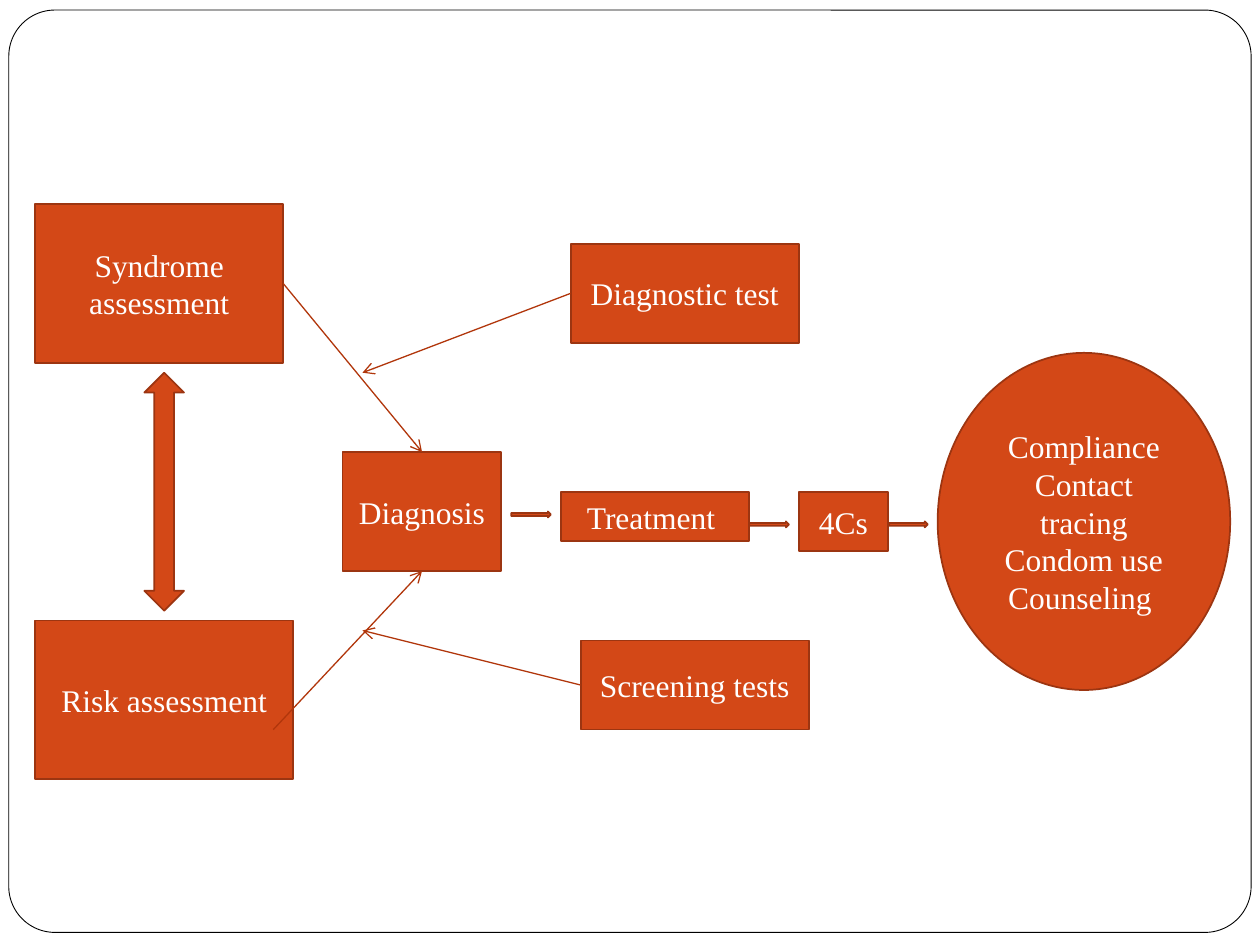
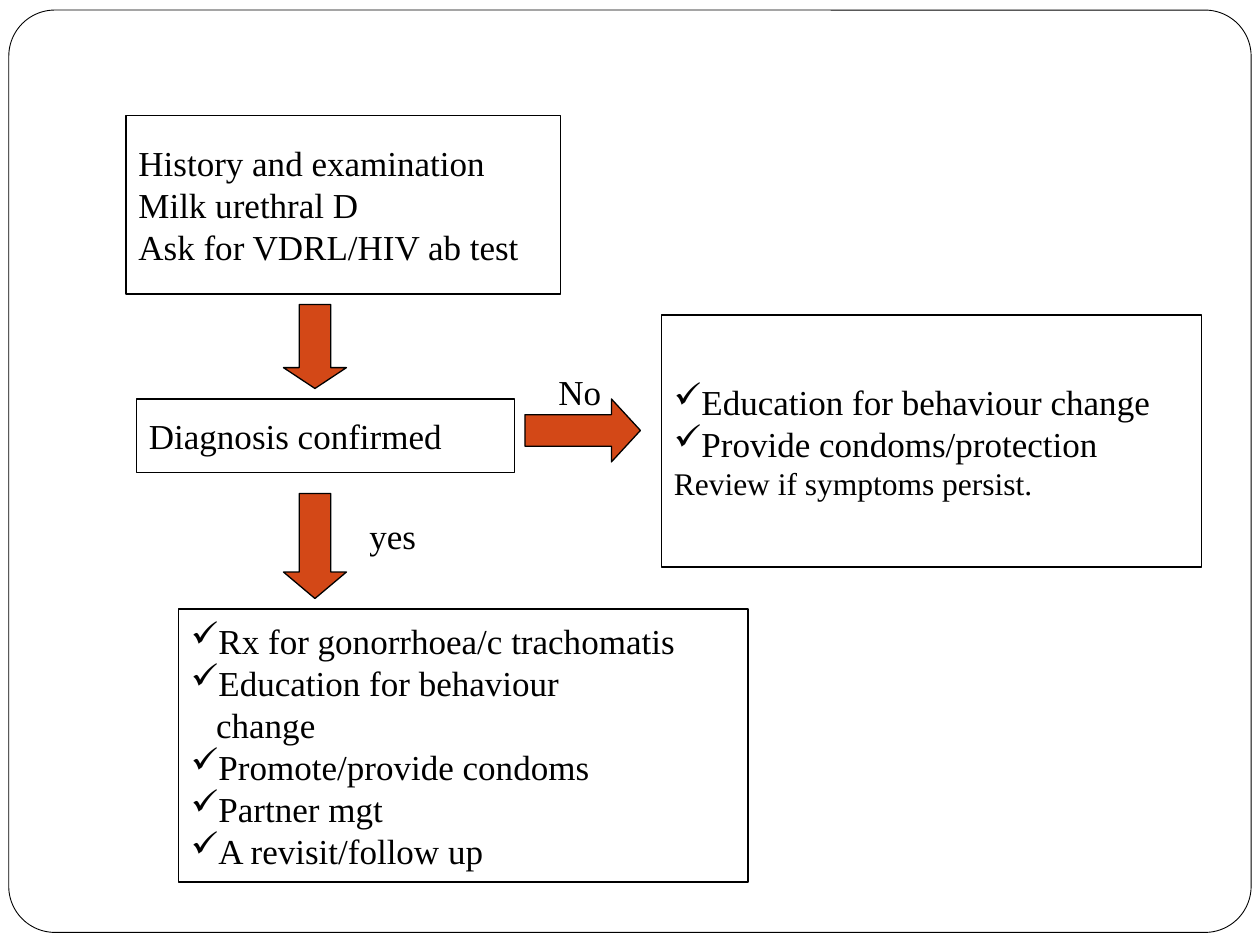
from dataclasses import dataclass

from lxml.etree import SubElement
from pptx import Presentation
from pptx.dml.color import RGBColor
from pptx.enum.shapes import MSO_CONNECTOR as Connector, MSO_SHAPE as Shape
from pptx.enum.text import MSO_ANCHOR as Anchor, PP_ALIGN as Align
from pptx.oxml.ns import qn
from pptx.util import Inches, Pt

WIDTH, HEIGHT = 10, 7.5
FONT = "Times New Roman"
COLORS = {"paper": "FFFFFF", "ink": "000000", "accent": "D34817",
          "accent_edge": "9C3511", "link": "B1360B"}
TOP, LEFT, BOTTOM, RIGHT = range(4)


@dataclass(frozen=True)
class Grid:
    """Square cells, counted from an origin in inches."""
    cell: float
    left: float = 0
    top: float = 0

    def point(self, column: float, row: float) -> tuple:
        return Inches(self.left + column * self.cell), Inches(self.top + row * self.cell)

    def area(self, column: float, row: float, columns: float, rows: float) -> tuple:
        return (*self.point(column, row), Inches(columns * self.cell), Inches(rows * self.cell))


@dataclass(frozen=True)
class Style:
    fill: str
    edge: str
    weight: float
    ink: str
    size: float
    align: Align


@dataclass(frozen=True)
class Line:
    """One paragraph, with its departures from the box's style."""
    text: str
    check: bool = False
    size: float | None = None
    indent: float = 0


@dataclass(frozen=True)
class Node:
    cells: tuple
    lines: tuple = ()
    kind: Shape = Shape.RECTANGLE
    adjustments: tuple = ()


@dataclass(frozen=True)
class Link:
    source: str
    source_side: int | None
    start: tuple
    end: tuple
    target: str = ""
    target_side: int | None = None


SYNDROME_GRID = Grid(0.0787, left=0.28, top=1.62)
FLOW_GRID = Grid(1 / 12)
SOLID = Style("accent", "accent_edge", 1, "paper", 18, Align.CENTER)
OUTLINED = Style("paper", "ink", 0.75, "ink", 20, Align.LEFT)
ARROW = Style("accent", "ink", 0.75, "ink", 20, Align.LEFT)
FRAME = Style("paper", "ink", 0.5, "ink", 18, Align.LEFT)

STAGES = {
    "syndrome": Node((0, 0, 25, 16), (Line("Syndrome assessment"),)),
    "risk": Node((0, 42, 26, 16), (Line("Risk assessment"),)),
    "diagnostic": Node((54, 4, 23, 10), (Line("Diagnostic test"),)),
    "screening": Node((55, 44, 23, 9), (Line("Screening tests"),)),
    "diagnosis": Node((31, 25, 16, 12), (Line("Diagnosis"),)),
    "treatment": Node((53, 29, 19, 5), (Line("Treatment "),)),
    "four_cs": Node((77, 29, 9, 6), (Line("4Cs"),)),
    "four_cs_meaning": Node(
        (91, 15, 29.5, 34),
        tuple(map(Line, ("Compliance", "Contact tracing", "Condom use", "Counseling "))),
        Shape.OVAL),
}
STAGE_ARROWS = (
    Node((11, 17, 4, 24), kind=Shape.UP_DOWN_ARROW),
    Node((48, 31, 4, 0.6), kind=Shape.RIGHT_ARROW),
    Node((72, 32, 4, 0.6), kind=Shape.RIGHT_ARROW),
    Node((86, 32, 4, 0.6), kind=Shape.NOTCHED_RIGHT_ARROW),
)
LINKS = (
    Link("syndrome", RIGHT, (25, 8), (39, 25), "diagnosis", TOP),
    Link("risk", None, (24, 53), (39, 37), "diagnosis", BOTTOM),
    Link("diagnostic", LEFT, (54, 9), (33, 17)),
    Link("screening", LEFT, (55, 48.5), (33, 43)),
)

STEPS = (
    Node((12, 11, 41.4, 17),
         (Line("History and examination"), Line("Milk urethral D"),
          Line("Ask for VDRL/HIV ab test")), Shape.FLOWCHART_PROCESS),
    Node((13, 38, 36, 7), (Line("Diagnosis confirmed"),), Shape.FLOWCHART_PROCESS),
    Node((17, 58, 54.25, 26),
         (Line("Rx for gonorrhoea/c trachomatis", check=True),
          Line("Education for behaviour", check=True),
          Line("change", indent=0.2),
          Line("Promote/provide condoms", check=True),
          Line("Partner mgt", check=True),
          Line("A revisit/follow up", check=True)), Shape.FLOWCHART_PROCESS),
    Node((63, 30, 51.4, 24),
         (Line("Education for behaviour change", check=True),
          Line("Provide condoms/protection", check=True),
          Line("Review if symptoms persist.", size=18)), Shape.FLOWCHART_PROCESS),
)
STEP_ARROWS = (
    Node((27, 29, 6, 8), kind=Shape.DOWN_ARROW, adjustments=(0.5, 0.33)),
    Node((27, 47, 6, 10), kind=Shape.DOWN_ARROW, adjustments=(0.5, 0.42)),
    Node((50, 38, 11, 6), kind=Shape.RIGHT_ARROW, adjustments=(0.5, 0.46)),
)
ANSWERS = (Node((34, 48.4, 7.3, 5.2), (Line("yes"),)),
           Node((52, 34.7, 7.1, 5.2), (Line("No"),)))


def color(name: str) -> RGBColor:
    return RGBColor.from_string(COLORS[name])


def write(frame, lines: tuple, *, size: float, ink: str, align: Align,
          wrap: bool = True, anchor: Anchor = Anchor.MIDDLE) -> None:
    frame.word_wrap = wrap
    frame.vertical_anchor = anchor
    for number, line in enumerate(lines):
        paragraph = frame.add_paragraph() if number else frame.paragraphs[0]
        paragraph.alignment = align
        properties = paragraph._p.get_or_add_pPr()
        properties.set("marL", str(Inches(line.indent)))
        properties.set("indent", "0")
        if line.check:
            SubElement(properties, qn("a:buChar"), char="✓")
        run = paragraph.add_run()
        run.text = line.text
        run.font.name = FONT
        run.font.size = Pt(line.size or size)
        run.font.color.rgb = color(ink)


def draw_node(slide, grid: Grid, node: Node, style: Style):
    shape = slide.shapes.add_shape(node.kind, *grid.area(*node.cells))
    shape.shadow.inherit = False
    shape.fill.solid()
    shape.fill.fore_color.rgb = color(style.fill)
    shape.line.color.rgb = color(style.edge)
    shape.line.width = Pt(style.weight)
    for index, value in enumerate(node.adjustments):
        shape.adjustments[index] = value
    if node.lines:
        write(shape.text_frame, node.lines, size=style.size, ink=style.ink, align=style.align)
    return shape


def draw_link(slide, grid: Grid, link: Link, stages: dict) -> None:
    line = slide.shapes.add_connector(
        Connector.STRAIGHT, *grid.point(*link.start), *grid.point(*link.end))
    if link.source_side is not None:
        line.begin_connect(stages[link.source], link.source_side)
    if link.target_side is not None:
        line.end_connect(stages[link.target], link.target_side)
    line.line.color.rgb = color("link")
    line.line.width = Pt(0.75)
    SubElement(line.line._get_or_add_ln(), qn("a:tailEnd"), type="arrow")
    SubElement(line._element.spPr, qn("a:effectLst"))


def add_framed_slide(deck):
    slide = deck.slides.add_slide(deck.slide_layouts[6])
    border = Node((0.07, 0.08, 9.86, 7.32), kind=Shape.ROUNDED_RECTANGLE, adjustments=(0.05,))
    draw_node(slide, Grid(1), border, FRAME)
    return slide


def build_assessment_slide(deck) -> None:
    slide = add_framed_slide(deck)
    stages = {name: draw_node(slide, SYNDROME_GRID, node, SOLID)
              for name, node in STAGES.items()}
    for arrow in STAGE_ARROWS:
        draw_node(slide, SYNDROME_GRID, arrow, SOLID)
    for link in LINKS:
        draw_link(slide, SYNDROME_GRID, link, stages)


def build_flowchart_slide(deck) -> None:
    slide = add_framed_slide(deck)
    for nodes, style in ((STEPS, OUTLINED), (STEP_ARROWS, ARROW)):
        for node in nodes:
            draw_node(slide, FLOW_GRID, node, style)
    for answer in ANSWERS:
        label = slide.shapes.add_textbox(*FLOW_GRID.area(*answer.cells))
        write(label.text_frame, answer.lines, size=20, ink="ink", align=Align.LEFT,
              wrap=False, anchor=Anchor.TOP)


def main() -> None:
    deck = Presentation()
    deck.slide_width, deck.slide_height = Inches(WIDTH), Inches(HEIGHT)
    build_assessment_slide(deck)
    build_flowchart_slide(deck)
    deck.save("out.pptx")


if __name__ == "__main__":
    main()
